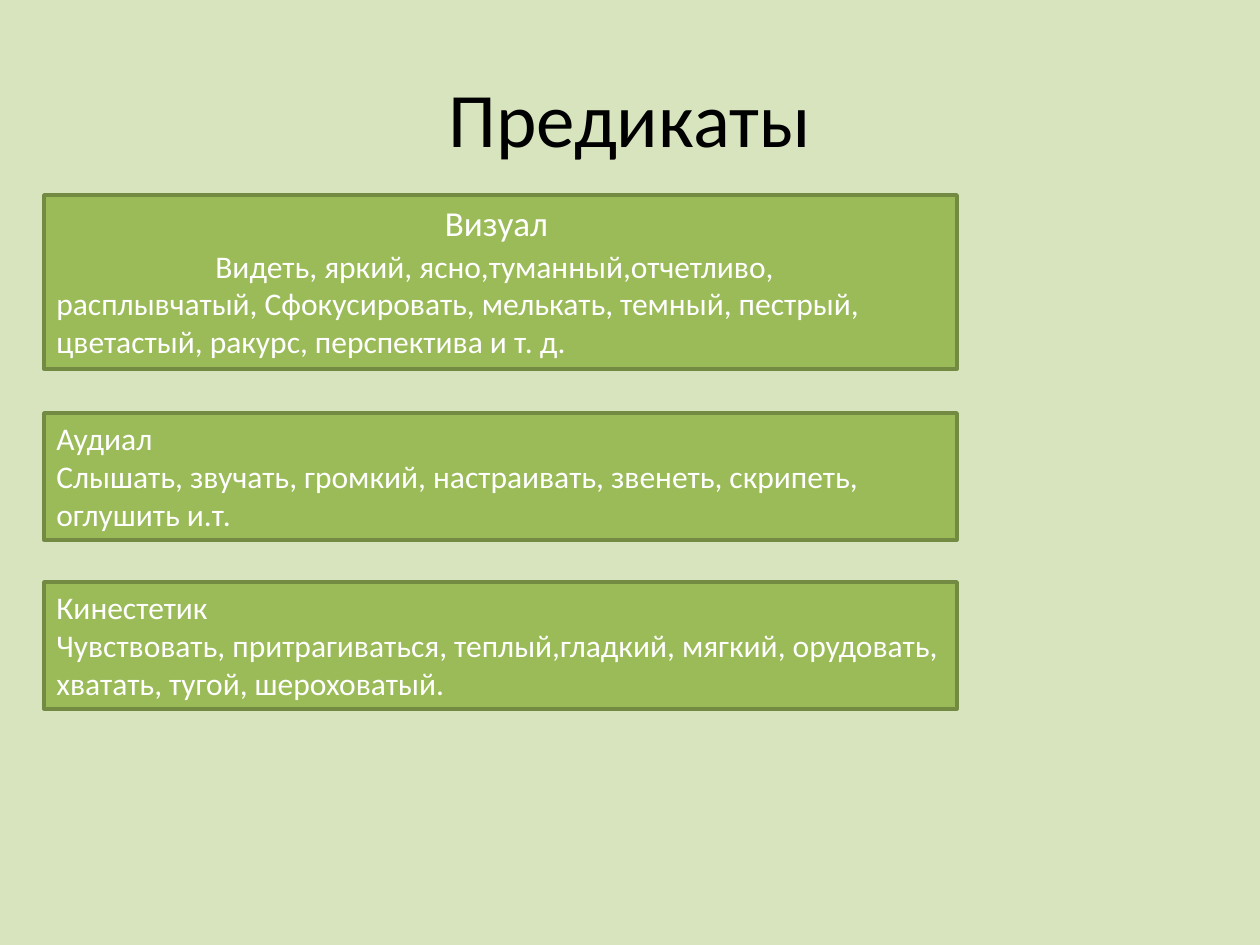
import pptx
import pptx.util
import pptx.dml.color
import pptx.enum.shapes
import pptx.enum.text

PX = 914400 // 126
ALIGN = pptx.enum.text.PP_ALIGN
ANCHOR = pptx.enum.text.MSO_ANCHOR


def color(value):
    return pptx.dml.color.RGBColor.from_string(value)


def style(p, size, value):
    for r in p.runs:
        r.font.name = "Calibri"
        r.font.size = pptx.util.Pt(size)
        r.font.color.rgb = color(value)


prs = pptx.Presentation()
prs.slide_width = 1260 * PX
prs.slide_height = 945 * PX
s = prs.slides.add_slide(prs.slide_layouts[6])
s.background.fill.solid()
s.background.fill.fore_color.rgb = color("D7E4BD")

# Title
sp = s.shapes.add_textbox(63 * PX, 38 * PX, 1134 * PX, 157 * PX)
tf = sp.text_frame
tf.word_wrap = True
tf.vertical_anchor = ANCHOR.MIDDLE
tf.text = "Предикаты"
tf.paragraphs[0].alignment = ALIGN.CENTER
style(tf.paragraphs[0], 44, "000000")

# Predicate boxes: top, height, heading, heading size, words
boxes = [
    (195, 174, "Визуал ", 20,
     "Видеть, яркий, ясно,туманный,отчетливо, расплывчатый, Сфокусировать, "
     "мелькать, темный, пестрый, цветастый, ракурс, перспектива и т. д."),
    (413, 127, "Аудиал", 18,
     "Слышать, звучать, громкий, настраивать, звенеть, скрипеть, оглушить и.т."),
    (582, 127, "Кинестетик", 18,
     "Чувствовать, притрагиваться, теплый,гладкий, мягкий, орудовать, "
     "хватать, тугой, шероховатый."),
]
for top, height, heading, size, words in boxes:
    sp = s.shapes.add_shape(pptx.enum.shapes.MSO_SHAPE.RECTANGLE,
                            44 * PX, top * PX, 913 * PX, height * PX)
    sp.shadow.inherit = False
    sp.fill.solid()
    sp.fill.fore_color.rgb = color("9BBB59")
    sp.line.color.rgb = color("738A42")
    sp.line.width = pptx.util.Pt(2)
    tf = sp.text_frame
    tf.word_wrap = True
    tf.vertical_anchor = ANCHOR.TOP
    tf.text = heading + "\n" + words
    for p, pt in zip(tf.paragraphs, (size, 18)):
        p.alignment = ALIGN.LEFT
        style(p, pt, "FFFFFF")

# The first box has a centred heading and an indented first line
p, body = s.shapes[1].text_frame.paragraphs
p.alignment = ALIGN.CENTER
body.space_before = pptx.util.Pt(2)
body._p.get_or_add_pPr().set("marL", "0")
body._p.get_or_add_pPr().set("indent", str(159 * PX))

prs.save("out.pptx")
